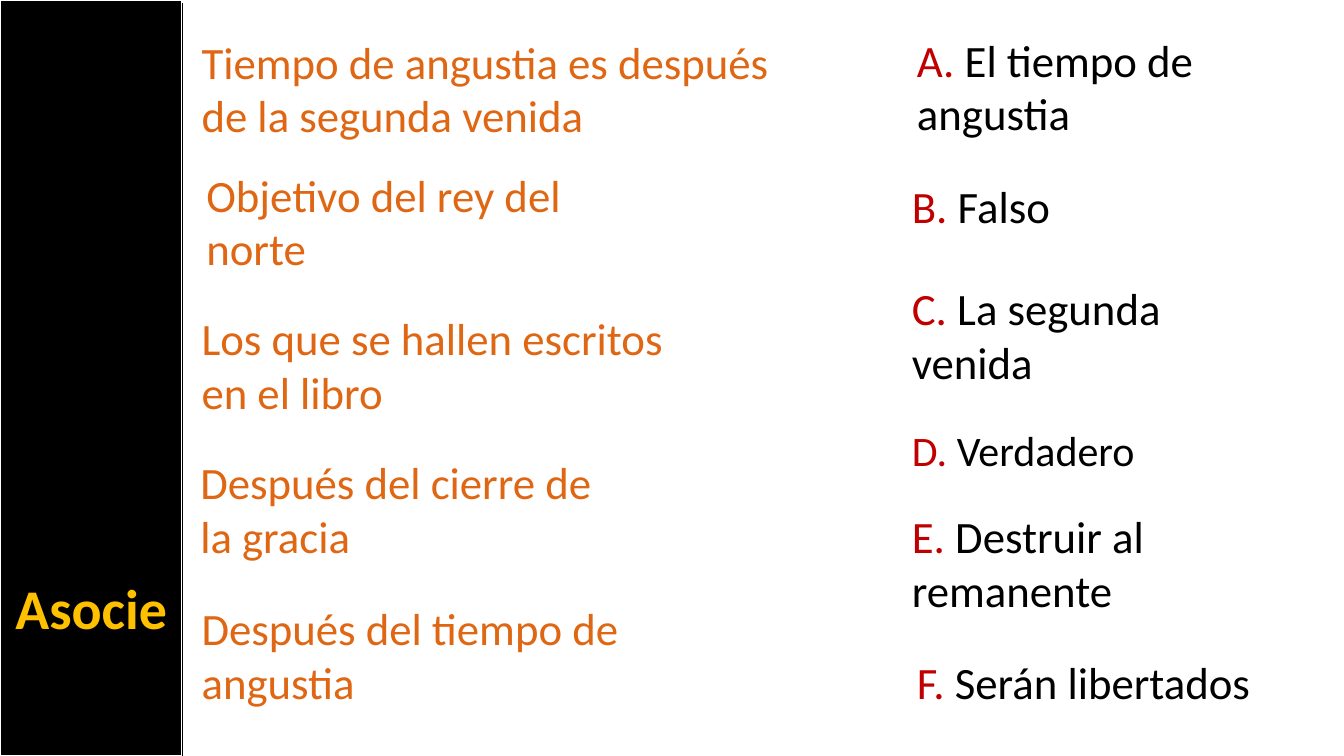
from lxml import etree
from pptx import Presentation
from pptx.dml.color import RGBColor
from pptx.enum.shapes import MSO_CONNECTOR, MSO_SHAPE
from pptx.enum.text import MSO_ANCHOR, MSO_AUTO_SIZE, PP_ALIGN
from pptx.oxml.ns import qn
from pptx.util import Cm, Pt

RECTANGLE = MSO_SHAPE.RECTANGLE
STRAIGHT = MSO_CONNECTOR.STRAIGHT
TOP = MSO_ANCHOR.TOP
GROW = MSO_AUTO_SIZE.SHAPE_TO_FIT_TEXT
LEFT, CENTER = PP_ALIGN.LEFT, PP_ALIGN.CENTER

BLACK, WHITE, ORANGE, RED, GOLD = "000000", "FFFFFF", "DF6613", "C00000", "FFC000"
BAR_WIDTH, SLIDE_HEIGHT = 4.6, 19.05
TWO_LINES, ONE_LINE = 3.0, 1.62


def color(hex_string):
    return RGBColor.from_string(hex_string)


def write_text(shape, *runs, size=32, bold=False, align=LEFT):
    """Fill the shape with one paragraph; each run is a (text, colour) pair."""
    frame = shape.text_frame
    frame.word_wrap = True
    frame.auto_size = GROW
    frame.vertical_anchor = TOP
    paragraph = frame.paragraphs[0]
    paragraph.alignment = align
    for text, text_color in runs:
        run = paragraph.add_run()
        run.text = text
        run.font.name = "Calibri"
        run.font.size = Pt(size)
        run.font.bold = bold
        run.font.color.rgb = color(text_color)


presentation = Presentation()
presentation.slide_width = Cm(33.87)
presentation.slide_height = Cm(SLIDE_HEIGHT)
slide = presentation.slides.add_slide(presentation.slide_layouts[5])

# Black side bar with the title on it
bar = slide.shapes.add_shape(RECTANGLE, 0, 0, Cm(BAR_WIDTH), Cm(SLIDE_HEIGHT))
bar.shadow.inherit = False
bar.fill.solid()
bar.fill.fore_color.rgb = color(BLACK)
bar.line.color.rgb = color(WHITE)
bar.line.width = Pt(1.5)

title = slide.shapes.title
title.left, title.top = Cm(0), Cm(14.33)
title.width, title.height = Cm(BAR_WIDTH), Cm(1.97)
write_text(title, ("Asocie", GOLD), size=40, bold=True, align=CENTER)
bar.element.addnext(title.element)

# Statements to match: text, left, top, width
statements = [
    ("Tiempo de angustia es después de la segunda venida", 4.83, 0.74, 15.6),
    ("Objetivo del rey del norte", 4.95, 4.09, 11.73),
    ("Los que se hallen escritos en el libro", 4.83, 7.7, 12.9),
    ("Después del cierre de la gracia", 4.8, 11.33, 11.15),
    ("Después del tiempo de angustia", 4.83, 15.01, 11.66),
]
for text, left, top, width in statements:
    box = slide.shapes.add_textbox(Cm(left), Cm(top), Cm(width), Cm(TWO_LINES))
    write_text(box, (text, ORANGE))

# Lettered answers: letter, text, left, top, width, height, size
answers = [
    ("A", "El tiempo de angustia", 22.86, 0.69, 9.7, TWO_LINES, 32),
    ("B", "Falso", 22.73, 4.39, 9.7, ONE_LINE, 32),
    ("C", "La segunda venida", 22.73, 6.96, 9.09, TWO_LINES, 32),
    ("D", "Verdadero", 22.73, 10.57, 8.84, 1.54, 30),
    ("E", "Destruir al remanente", 22.73, 12.7, 8.25, TWO_LINES, 32),
    ("F", "Serán libertados", 22.86, 16.38, 10.31, ONE_LINE, 32),
]
for letter, text, left, top, width, height, size in answers:
    box = slide.shapes.add_textbox(Cm(left), Cm(top), Cm(width), Cm(height))
    write_text(box, (f"{letter}. ", RED), (text, BLACK), size=size)

# Edge of the side bar
edge = slide.shapes.add_connector(
    STRAIGHT, Cm(BAR_WIDTH), Cm(0.08), Cm(BAR_WIDTH), Cm(SLIDE_HEIGHT))
edge.line.color.rgb = color(BLACK)
edge.line.width = Pt(1)
etree.SubElement(edge.element.spPr, qn("a:effectLst"))

presentation.save("out.pptx")
